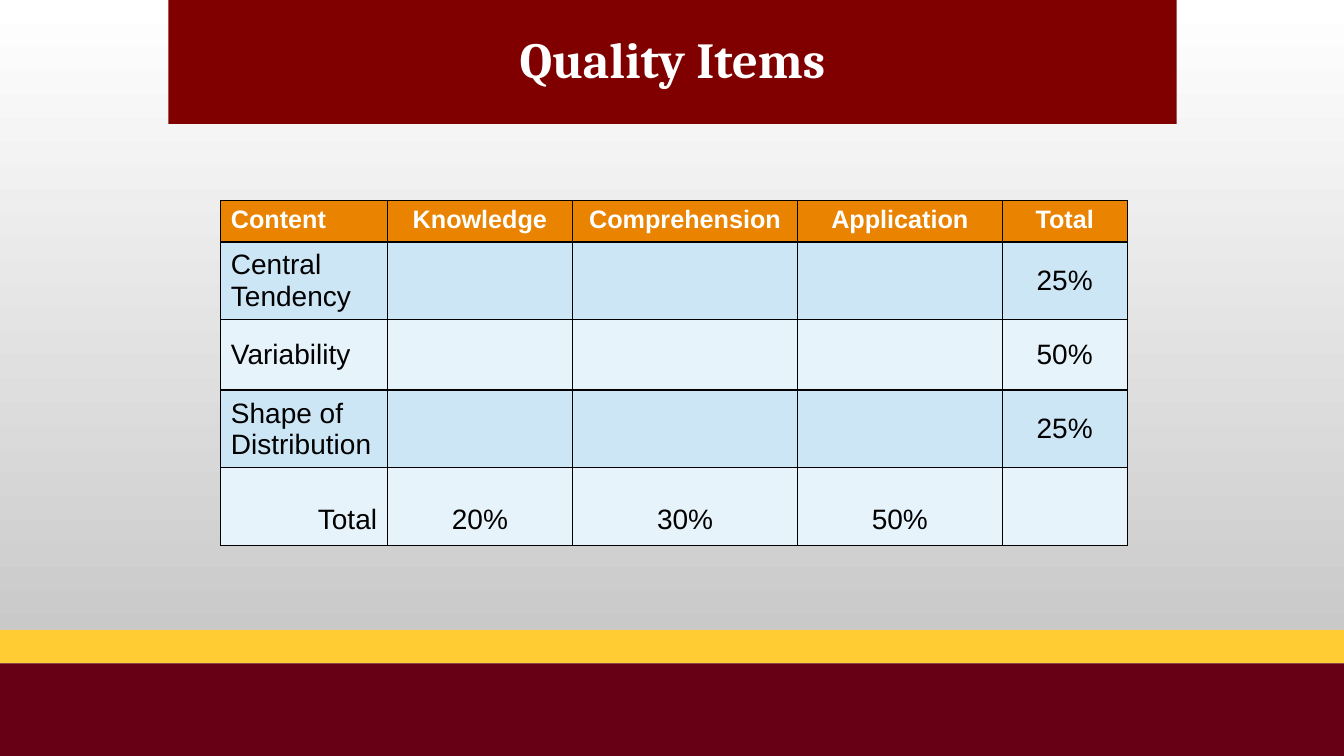
from lxml import etree
from pptx import Presentation
from pptx.dml.color import RGBColor
from pptx.enum.shapes import MSO_SHAPE
from pptx.enum.text import MSO_ANCHOR, PP_ALIGN
from pptx.oxml.ns import qn
from pptx.util import Inches, Pt

RECTANGLE = MSO_SHAPE.RECTANGLE
TOP, MIDDLE, BOTTOM = MSO_ANCHOR.TOP, MSO_ANCHOR.MIDDLE, MSO_ANCHOR.BOTTOM
LEFT, CENTER, RIGHT = PP_ALIGN.LEFT, PP_ALIGN.CENTER, PP_ALIGN.RIGHT

WHITE = RGBColor(0xFF, 0xFF, 0xFF)
BLACK = RGBColor(0x00, 0x00, 0x00)
GREY = RGBColor(0xBF, 0xBF, 0xBF)
CRIMSON = RGBColor(0x80, 0x00, 0x00)
MAROON = RGBColor(0x67, 0x00, 0x15)
GOLD = RGBColor(0xFF, 0xCC, 0x33)
ORANGE = RGBColor(0xE9, 0x83, 0x00)
BLUE = RGBColor(0xCC, 0xE6, 0xF5)
PALE_BLUE = RGBColor(0xE7, 0xF3, 0xFA)

SLIDE_WIDTH, SLIDE_HEIGHT = 13.33, 7.5
COLUMN_WIDTHS = [1.65, 1.84, 2.23, 2.03, 1.24]
ROW_HEIGHTS = [0.41, 0.77, 0.7, 0.77, 0.77]
ROWS = [
    ["Content", "Knowledge", "Comprehension", "Application", "Total"],
    ["Central Tendency", "", "", "", "25%"],
    ["Variability", "", "", "", "50%"],
    ["Shape of Distribution", "", "", "", "25%"],
    ["Total", "20%", "30%", "50%", ""],
]


def add_span(para, text, font_name, size, color, bold):
    span = para.add_run()
    span.text = text
    span.font.name = font_name
    span.font.size = Pt(size)
    span.font.color.rgb = color
    span.font.bold = bold


def paint_background(page):
    fill = page.background.fill
    fill.gradient()
    fill.gradient_angle = 270
    for stop, position, color in zip(fill.gradient_stops, (0, 1), (WHITE, GREY)):
        stop.position = position
        stop.color.rgb = color


def add_footer(page, top, height, gold_height):
    """Stack a gold band on a maroon band across the whole page."""
    bands = [(top, gold_height, GOLD),
             (top + gold_height, height - gold_height, MAROON)]
    for band_top, band_height, color in bands:
        band = page.shapes.add_shape(RECTANGLE, 0, Inches(band_top),
                                     Inches(SLIDE_WIDTH), Inches(band_height))
        band.shadow.inherit = False
        band.fill.solid()
        band.fill.fore_color.rgb = color
        band.line.fill.background()


def add_title(page, text, left, top, width, height):
    title = page.shapes.title
    title.left, title.top = Inches(left), Inches(top)
    title.width, title.height = Inches(width), Inches(height)
    title.fill.solid()
    title.fill.fore_color.rgb = CRIMSON
    title.text_frame.vertical_anchor = MIDDLE
    para = title.text_frame.paragraphs[0]
    para.alignment = CENTER
    para.line_spacing = 0.9
    add_span(para, text, "Cambria", 36, WHITE, True)


def add_borders(cell, color, width):
    properties = cell._tc.get_or_add_tcPr()
    for side in ("a:lnL", "a:lnR", "a:lnT", "a:lnB"):
        line = etree.SubElement(properties, qn(side), w=str(Pt(width)))
        fill = etree.SubElement(line, qn("a:solidFill"))
        etree.SubElement(fill, qn("a:srgbClr"), val=str(color))


def fill_cell(cell, text, row, column):
    is_header, is_total = row == 0, row == len(ROWS) - 1
    add_borders(cell, BLACK, 1)
    cell.fill.solid()
    cell.fill.fore_color.rgb = ORANGE if is_header else BLUE if row % 2 else PALE_BLUE
    cell.vertical_anchor = TOP if is_header else BOTTOM if is_total else MIDDLE
    cell.margin_left = cell.margin_right = Inches(0.1)
    cell.margin_top = Inches(0.05)
    cell.margin_bottom = Inches(0.1 if is_total else 0.05)
    if text:
        para = cell.text_frame.paragraphs[0]
        para.alignment = CENTER if column else RIGHT if is_total else LEFT
        add_span(para, text, "Arial", 18 if is_header else 20,
                 WHITE if is_header else BLACK, is_header)


def add_items_table(page, left, top):
    frame = page.shapes.add_table(
        len(ROW_HEIGHTS), len(COLUMN_WIDTHS), Inches(left), Inches(top),
        Inches(sum(COLUMN_WIDTHS)), Inches(sum(ROW_HEIGHTS)))
    table = frame.table
    for column, width in zip(table.columns, COLUMN_WIDTHS):
        column.width = Inches(width)
    for row, height in zip(table.rows, ROW_HEIGHTS):
        row.height = Inches(height)
    for row, texts in enumerate(ROWS):
        for column, text in enumerate(texts):
            fill_cell(table.cell(row, column), text, row, column)


def main():
    deck = Presentation()
    deck.slide_width, deck.slide_height = Inches(SLIDE_WIDTH), Inches(SLIDE_HEIGHT)
    page = deck.slides.add_slide(deck.slide_layouts.get_by_name("Title Only"))
    paint_background(page)
    add_footer(page, 6.25, SLIDE_HEIGHT - 6.25, 0.33)
    add_title(page, "Quality Items", 1.67, 0, 10, 1.23)
    add_items_table(page, 2.19, 1.99)
    deck.save("out.pptx")


if __name__ == "__main__":
    main()
